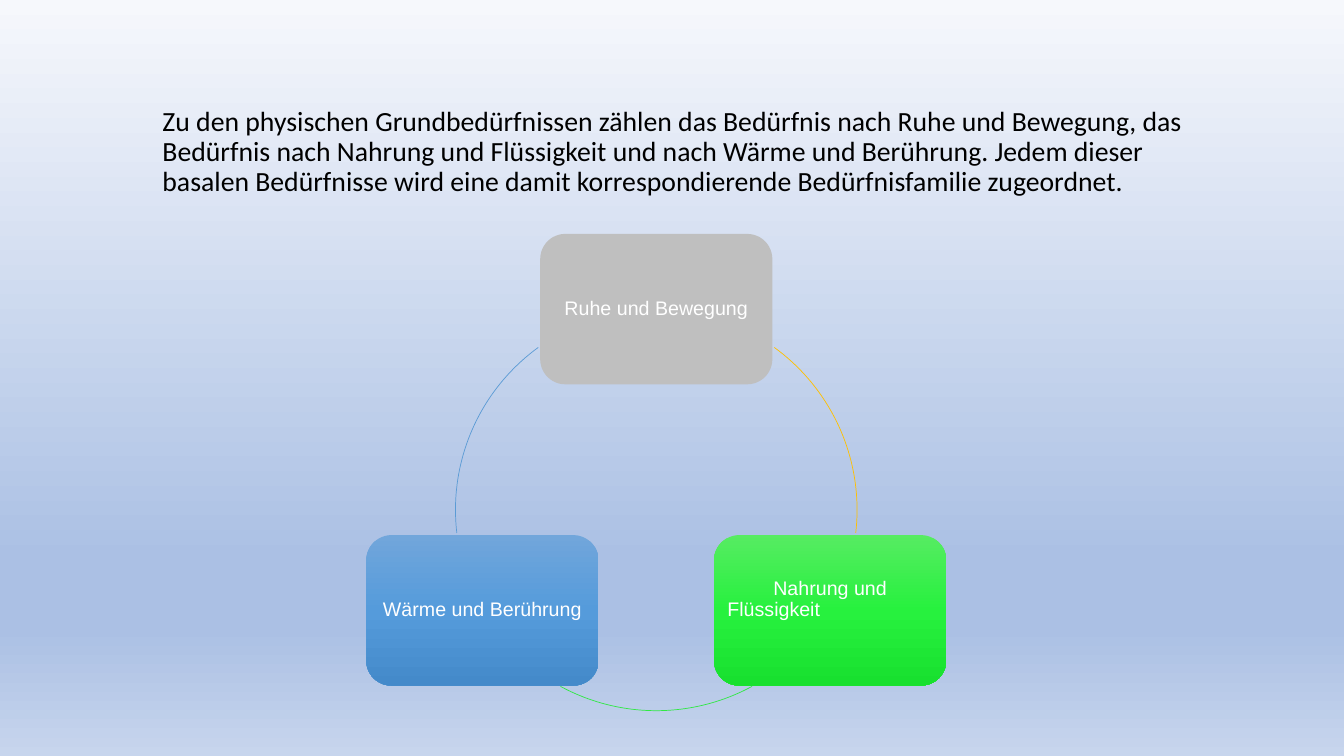
from math import cos, radians, sin

from lxml import etree
from pptx import Presentation
from pptx.dml.color import RGBColor
from pptx.enum.shapes import MSO_SHAPE
from pptx.enum.text import MSO_ANCHOR, MSO_AUTO_SIZE, PP_ALIGN
from pptx.oxml.ns import qn
from pptx.util import Cm, Pt

ROUNDED, ARC = MSO_SHAPE.ROUNDED_RECTANGLE, MSO_SHAPE.ARC
TOP, MIDDLE = MSO_ANCHOR.TOP, MSO_ANCHOR.MIDDLE
LEFT, CENTER = PP_ALIGN.LEFT, PP_ALIGN.CENTER
NO_AUTOFIT = MSO_AUTO_SIZE.NONE

THEME = {
    "background": [(0, "F6F8FC"), (74, "ABC0E4"), (83, "ABC0E4"), (100, "C7D5ED")],
    "gray": [(0, "BFBFBF")],
    "green": [(0, "56EC62"), (50, "27F13E"), (100, "18E02F")],
    "blue": [(0, "71A6DB"), (50, "559BDB"), (100, "448ACA")],
    "arc_yellow": "FFC000",
    "arc_green": "30E845",
    "arc_blue": "5B9BD5",
    "title_text": "000000",
    "card_text": "FFFFFF",
    "title_font": "Calibri",
    "card_font": "Arial",
    "title_size": Pt(19.8),
    "card_size": Pt(14),
    "arc_width": Pt(0.5),
}


def paint(fill, element, stops):
    if len(stops) == 1:
        fill.solid()
        fill.fore_color.rgb = RGBColor.from_string(stops[0][1])
        return
    fill.gradient()
    fill.gradient_angle = 270
    gs_lst = next(element.iter(qn("a:gsLst")))
    for gs in list(gs_lst):
        gs_lst.remove(gs)
    for percent, color in stops:
        gs = etree.SubElement(gs_lst, qn("a:gs"), pos=str(percent * 1000))
        etree.SubElement(gs, qn("a:srgbClr"), val=color)


def style(p, font, size, color, align):
    p.font.name = THEME[font]
    p.font.size = THEME[size]
    p.font.color.rgb = RGBColor.from_string(THEME[color])
    p.alignment = align
    p.line_spacing = 0.9


prs = Presentation()
prs.slide_width, prs.slide_height = Cm(33.87), Cm(19.05)
s = prs.slides.add_slide(prs.slide_layouts[5])
paint(s.background.fill, s._element, THEME["background"])

title = s.shapes.title
title.left, title.top, title.width, title.height = Cm(3.84), Cm(1.02), Cm(26.47), Cm(3.68)
tf = title.text_frame
tf.text = (
    "Zu den physischen Grundbedürfnissen zählen das Bedürfnis nach Ruhe und Bewegung, "
    "das Bedürfnis nach Nahrung und Flüssigkeit und nach Wärme und Berührung. "
    "Jedem dieser basalen Bedürfnisse wird eine damit korrespondierende "
    "Bedürfnisfamilie zugeordnet."
)
tf.word_wrap = True
tf.auto_size = NO_AUTOFIT
tf.vertical_anchor = TOP
tf.margin_top, tf.margin_bottom = Cm(1.68), 0
style(tf.paragraphs[0], "title_font", "title_size", "title_text", LEFT)

CENTER_X, CENTER_Y, RADIUS = 16.54, 12.85, 5.06
CARD_W, CARD_H, INSET = 5.85, 3.79, 0.15
needs = [
    ([("Ruhe und Bewegung", CENTER)], "gray", INSET, "arc_yellow", 306, 6.6),
    ([("Nahrung und", CENTER), ("Flüssigkeit", LEFT)], "green", INSET + 0.53, "arc_green", 61.5, 118.5),
    ([("Wärme und Berührung", CENTER)], "blue", INSET, "arc_blue", 173.4, 234),
]

for i, (lines, card_fill, bottom, arc_color, start, end) in enumerate(needs):
    angle = radians(120 * i - 90)
    x = CENTER_X + RADIUS * cos(angle) - CARD_W / 2
    y = CENTER_Y + RADIUS * sin(angle) - CARD_H / 2
    card = s.shapes.add_shape(ROUNDED, Cm(x), Cm(y), Cm(CARD_W), Cm(CARD_H))
    card.shadow.inherit = False
    paint(card.fill, card._element, THEME[card_fill])
    card.line.fill.background()
    tf = card.text_frame
    tf.word_wrap = True
    tf.vertical_anchor = MIDDLE
    tf.margin_left = tf.margin_right = tf.margin_top = Cm(INSET)
    tf.margin_bottom = Cm(bottom)
    for n, (line, align) in enumerate(lines):
        p = tf.add_paragraph() if n else tf.paragraphs[0]
        p.text = line
        style(p, "card_font", "card_size", "card_text", align)

    arc = s.shapes.add_shape(
        ARC, Cm(CENTER_X - RADIUS), Cm(CENTER_Y - RADIUS), Cm(2 * RADIUS), Cm(2 * RADIUS)
    )
    arc.adjustments[0], arc.adjustments[1] = start * 0.6 * 100 / 100, end * 0.6
    arc.shadow.inherit = False
    arc.fill.background()
    arc.line.color.rgb = RGBColor.from_string(THEME[arc_color])
    arc.line.width = THEME["arc_width"]

prs.save("out.pptx")
